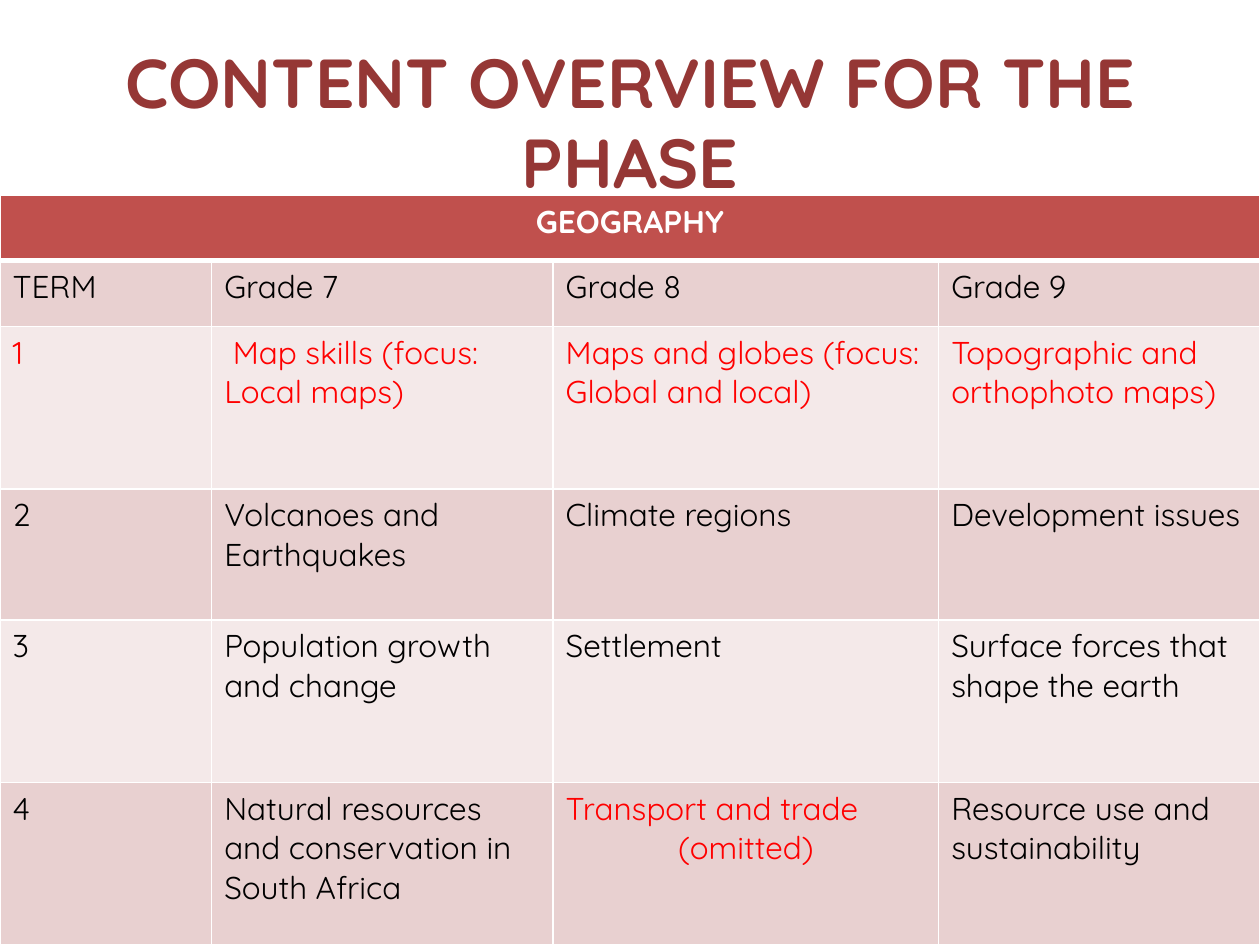
from lxml.etree import SubElement
from pptx import Presentation
from pptx.dml.color import RGBColor
from pptx.enum.text import MSO_ANCHOR, PP_ALIGN
from pptx.oxml.ns import qn
from pptx.util import Inches, Pt

COLORS = {
    "title": "953735",
    "header": "C0504D",
    "band_dark": "E8D0D0",
    "band_light": "F4E9E9",
    "white": "FFFFFF",
    "black": "000000",
    "changed": "FF0000",
}
FONT = "Quicksand"
COLUMN_WIDTHS = [1.68, 2.71, 3.06, 2.55]
ROW_HEIGHTS = [0.52, 0.52, 1.29, 1.04, 1.29, 1.29]
TERMS = [
    ["TERM", "Grade 7", "Grade 8", "Grade 9"],
    ["1", " Map skills (focus: Local maps)",
     "Maps and globes (focus: Global and local)",
     "Topographic and orthophoto maps)"],
    ["2", "Volcanoes and Earthquakes", "Climate regions", "Development issues"],
    ["3", "Population growth and change", "Settlement",
     "Surface forces that shape the earth"],
    ["4", "Natural resources and conservation in South Africa",
     "Transport and trade\n(omitted)", "Resource use and sustainability"],
]
CHANGED_CELLS = {(1, 0), (1, 1), (1, 2), (1, 3), (4, 2)}


def color(name):
    return RGBColor.from_string(COLORS[name])


def format_paragraph(paragraph, size, color_name, bold=False, alignment=PP_ALIGN.LEFT):
    paragraph.alignment = alignment
    font = paragraph.font
    font.name = FONT
    font.size = Pt(size)
    font.bold = bold
    font.color.rgb = color(color_name)


def add_title(slide, slide_width):
    title = slide.shapes.title
    title.left, title.top = 0, Inches(0.3)
    title.width, title.height = slide_width, Inches(1.32)
    frame = title.text_frame
    frame.text = "CONTENT OVERVIEW FOR THE PHASE"
    frame.word_wrap = True
    frame.vertical_anchor = MSO_ANCHOR.MIDDLE
    frame.margin_top, frame.margin_bottom = Inches(0.06), 0
    paragraph = frame.paragraphs[0]
    format_paragraph(paragraph, 39.6, "title", True, PP_ALIGN.CENTER)
    paragraph.line_spacing = 0.96


def set_borders(cell, bottom_width=1, top_width=1):
    properties = cell._tc.get_or_add_tcPr()
    widths = {"L": 1, "R": 1, "T": top_width, "B": bottom_width}
    for side, width in widths.items():
        line = SubElement(properties, qn(f"a:ln{side}"), w=str(Pt(width)))
        fill = SubElement(line, qn("a:solidFill"))
        SubElement(fill, qn("a:srgbClr"), val=COLORS["white"])


def fill_cell(cell, text, fill_name, text_color, bold=False, alignment=PP_ALIGN.LEFT):
    cell.fill.solid()
    cell.fill.fore_color.rgb = color(fill_name)
    cell.text = text
    for paragraph in cell.text_frame.paragraphs:
        format_paragraph(paragraph, 18, text_color, bold, alignment)


def add_overview_table(slide, slide_width):
    table = slide.shapes.add_table(
        len(ROW_HEIGHTS), len(COLUMN_WIDTHS), 0, Inches(1.55),
        slide_width, Inches(sum(ROW_HEIGHTS))).table
    table.horz_banding = False
    for column, width in zip(table.columns, COLUMN_WIDTHS):
        column.width = Inches(width)
    for row, height in zip(table.rows, ROW_HEIGHTS):
        row.height = Inches(height)

    for cell in table.rows[0].cells:
        set_borders(cell, bottom_width=3)
    header = table.cell(0, 0)
    header.merge(table.cell(0, len(COLUMN_WIDTHS) - 1))
    fill_cell(header, "GEOGRAPHY", "header", "white", True, PP_ALIGN.CENTER)

    for row_index, texts in enumerate(TERMS):
        fill_name = "band_light" if row_index % 2 else "band_dark"
        for column_index, text in enumerate(texts):
            changed = (row_index, column_index) in CHANGED_CELLS
            cell = table.cell(row_index + 1, column_index)
            set_borders(cell, top_width=1 if row_index else 3)
            fill_cell(cell, text, fill_name, "changed" if changed else "black")

    omitted = table.cell(5, 2).text_frame.paragraphs[1]
    omitted.alignment = PP_ALIGN.CENTER


def main():
    presentation = Presentation()
    presentation.slide_width = Inches(10)
    presentation.slide_height = Inches(7.5)
    slide = presentation.slides.add_slide(presentation.slide_layouts[5])
    add_title(slide, presentation.slide_width)
    add_overview_table(slide, presentation.slide_width)
    presentation.save("out.pptx")


if __name__ == "__main__":
    main()
